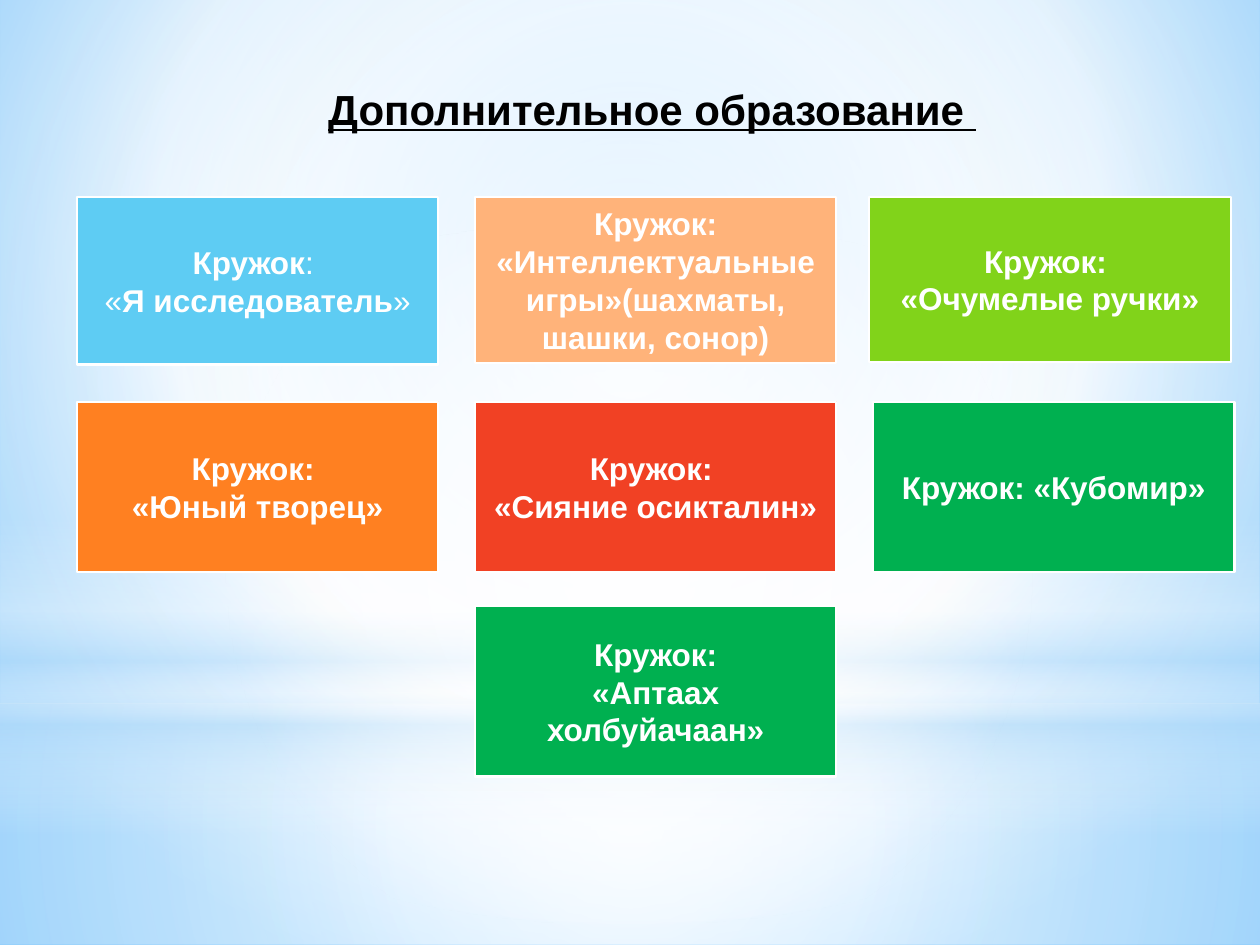
from dataclasses import dataclass
from typing import Optional

import lxml.etree
import pptx
import pptx.dml.color
import pptx.enum.shapes
import pptx.enum.text
import pptx.oxml.ns
import pptx.util

Pt = pptx.util.Pt
MSO_SHAPE = pptx.enum.shapes.MSO_SHAPE
Anchor = pptx.enum.text.MSO_ANCHOR


@dataclass(frozen=True)
class Theme:
    font: str = "Arial"
    title_size: float = 24
    card_size: float = 18
    dark: str = "000000"
    light: str = "FFFFFF"
    haze: str = "B4DCFA"
    sky: str = "9ED5FF"
    deep_sky: str = "5BB9FF"
    blue: str = "5ECCF3"
    peach: str = "FFB37A"
    lime: str = "81D31A"
    orange: str = "FF8021"
    red: str = "F14124"
    green: str = "00B050"


THEME = Theme()


@dataclass(frozen=True)
class Stop:
    position: int
    color: str
    opacity: int = 100


@dataclass(frozen=True)
class Gradient:
    """Linear when an angle is given, otherwise circular around the focus."""
    stops: tuple[Stop, ...]
    focus: tuple[int, int, int, int] = (50, 50, 50, 50)
    angle: Optional[int] = None


@dataclass(frozen=True)
class Glow:
    preset: MSO_SHAPE
    top: float
    height: float
    gradient: Gradient


@dataclass(frozen=True)
class Card:
    column: int
    row: int
    color: str
    lines: tuple[tuple[tuple[str, bool], ...], ...]
    height: float = 97.2
    shift: float = 0


def bold_lines(*texts: str) -> tuple[tuple[tuple[str, bool], ...], ...]:
    return tuple(((text, True),) for text in texts)


SLIDE_WIDTH, SLIDE_HEIGHT = 720, 540
CARD_LEFT, CARD_TOP, CARD_WIDTH = 43.9, 112.5, 206.6
COLUMN_STEP, ROW_STEP = 227.5, 117
CARD_INSET = 5

BACKGROUND = Gradient(
    (Stop(0, THEME.sky), Stop(60, THEME.light), Stop(100, THEME.deep_sky)),
    focus=(20, 10, 20, 60))

GLOWS = (
    Glow(MSO_SHAPE.RECTANGLE, 401.8, 138.2, Gradient(
        (Stop(0, THEME.light, 91), Stop(37, THEME.light, 76), Stop(100, THEME.haze, 79)))),
    Glow(MSO_SHAPE.RECTANGLE, 0, 401.8, Gradient(
        (Stop(0, THEME.light, 89), Stop(48, THEME.light, 62), Stop(100, THEME.haze, 79)))),
    Glow(MSO_SHAPE.RECTANGLE, 296.6, 180, Gradient(
        (Stop(0, THEME.light, 0), Stop(29, THEME.light, 30), Stop(45, THEME.haze, 40),
         Stop(55, THEME.light, 26), Stop(65, THEME.haze, 60), Stop(100, THEME.light, 0)),
        angle=90)),
    Glow(MSO_SHAPE.OVAL, 126, 401.8, Gradient(
        (Stop(0, THEME.light), Stop(56, THEME.light, 0)))),
)

CARDS = (
    Card(0, 0, THEME.blue, (
        (("Кружок", True), (": ", False)),
        (("«", False), ("Я исследователь", True), ("»", False))), height=95.8),
    Card(1, 0, THEME.peach,
         bold_lines("Кружок: «Интеллектуальные игры»(шахматы, шашки, сонор)"), height=95),
    Card(2, 0, THEME.lime, bold_lines("Кружок: ", "«Очумелые ручки»"),
         height=94.3, shift=-2.2),
    Card(0, 1, THEME.orange, bold_lines("Кружок: ", "«Юный творец»")),
    Card(1, 1, THEME.red, bold_lines("Кружок: ", "«Сияние осикталин»")),
    Card(2, 1, THEME.green, bold_lines("Кружок: «Кубомир»")),
    Card(1, 2, THEME.green, bold_lines("Кружок:", "«Аптаах холбуйачаан»")),
)


def rgb(color: str) -> pptx.dml.color.RGBColor:
    return pptx.dml.color.RGBColor.from_string(color)


def apply_gradient(fill, element, gradient: Gradient) -> None:
    """Swap the first solid fill inside the element for the gradient."""
    fill.solid()
    qn = pptx.oxml.ns.qn

    def add(parent, tag: str, **attributes):
        values = {name: str(value) for name, value in attributes.items()}
        return lxml.etree.SubElement(parent, qn(tag), values)

    solid = element.find(".//" + qn("a:solidFill"))
    grad = lxml.etree.Element(qn("a:gradFill"), rotWithShape="1")
    stop_list = add(grad, "a:gsLst")
    for stop in gradient.stops:
        color = add(add(stop_list, "a:gs", pos=stop.position * 1000),
                    "a:srgbClr", val=stop.color)
        if stop.opacity < 100:
            add(color, "a:alpha", val=stop.opacity * 1000)
    if gradient.angle is None:
        edges = {side: value * 1000 for side, value in zip("ltrb", gradient.focus)}
        add(add(grad, "a:path", path="circle"), "a:fillToRect", **edges)
    else:
        add(grad, "a:lin", ang=gradient.angle * 60000, scaled=0)
    solid.getparent().replace(solid, grad)


def write_text(frame, lines, *, size: float, color: str, underline: bool = False,
               anchor: Anchor = Anchor.MIDDLE, wrap: bool = True) -> None:
    frame.word_wrap = wrap
    frame.vertical_anchor = anchor
    for index, line in enumerate(lines):
        paragraph = frame.add_paragraph() if index else frame.paragraphs[0]
        paragraph.alignment = pptx.enum.text.PP_ALIGN.CENTER
        for text, bold in line:
            run = paragraph.add_run()
            run.text = text
            run.font.name = THEME.font
            run.font.size = Pt(size)
            run.font.bold = bold
            run.font.underline = underline
            run.font.color.rgb = rgb(color)


def add_glow(slide, glow: Glow) -> None:
    shape = slide.shapes.add_shape(
        glow.preset, Pt(0), Pt(glow.top), Pt(SLIDE_WIDTH), Pt(glow.height))
    shape.shadow.inherit = False
    shape.line.fill.background()
    apply_gradient(shape.fill, shape.element, glow.gradient)


def add_card(slide, card: Card) -> None:
    shape = slide.shapes.add_shape(
        MSO_SHAPE.RECTANGLE,
        Pt(CARD_LEFT + card.column * COLUMN_STEP + card.shift),
        Pt(CARD_TOP + card.row * ROW_STEP), Pt(CARD_WIDTH), Pt(card.height))
    shape.shadow.inherit = False
    shape.fill.solid()
    shape.fill.fore_color.rgb = rgb(card.color)
    shape.line.color.rgb = rgb(THEME.light)
    shape.line.width = Pt(1.25)
    frame = shape.text_frame
    frame.margin_left = frame.margin_right = Pt(CARD_INSET)
    frame.margin_top = frame.margin_bottom = Pt(CARD_INSET)
    write_text(frame, card.lines, size=THEME.card_size, color=THEME.light)


def place_title(slide) -> None:
    title = slide.shapes.title
    title.left, title.top, title.width, title.height = Pt(178.6), Pt(44.2), Pt(388), Pt(36)
    write_text(title.text_frame, bold_lines("Дополнительное образование "),
               size=THEME.title_size, color=THEME.dark, underline=True,
               anchor=Anchor.TOP, wrap=False)
    title.text_frame.auto_size = pptx.enum.text.MSO_AUTO_SIZE.SHAPE_TO_FIT_TEXT
    # Bring the title in front of the glows.
    title.element.getparent().append(title.element)


def main() -> None:
    presentation = pptx.Presentation()
    presentation.slide_width, presentation.slide_height = Pt(SLIDE_WIDTH), Pt(SLIDE_HEIGHT)
    slide = presentation.slides.add_slide(presentation.slide_layouts.get_by_name("Title Only"))
    apply_gradient(slide.background.fill, slide.element, BACKGROUND)
    for glow in GLOWS:
        add_glow(slide, glow)
    place_title(slide)
    for card in CARDS:
        add_card(slide, card)
    presentation.save("out.pptx")


if __name__ == "__main__":
    main()
